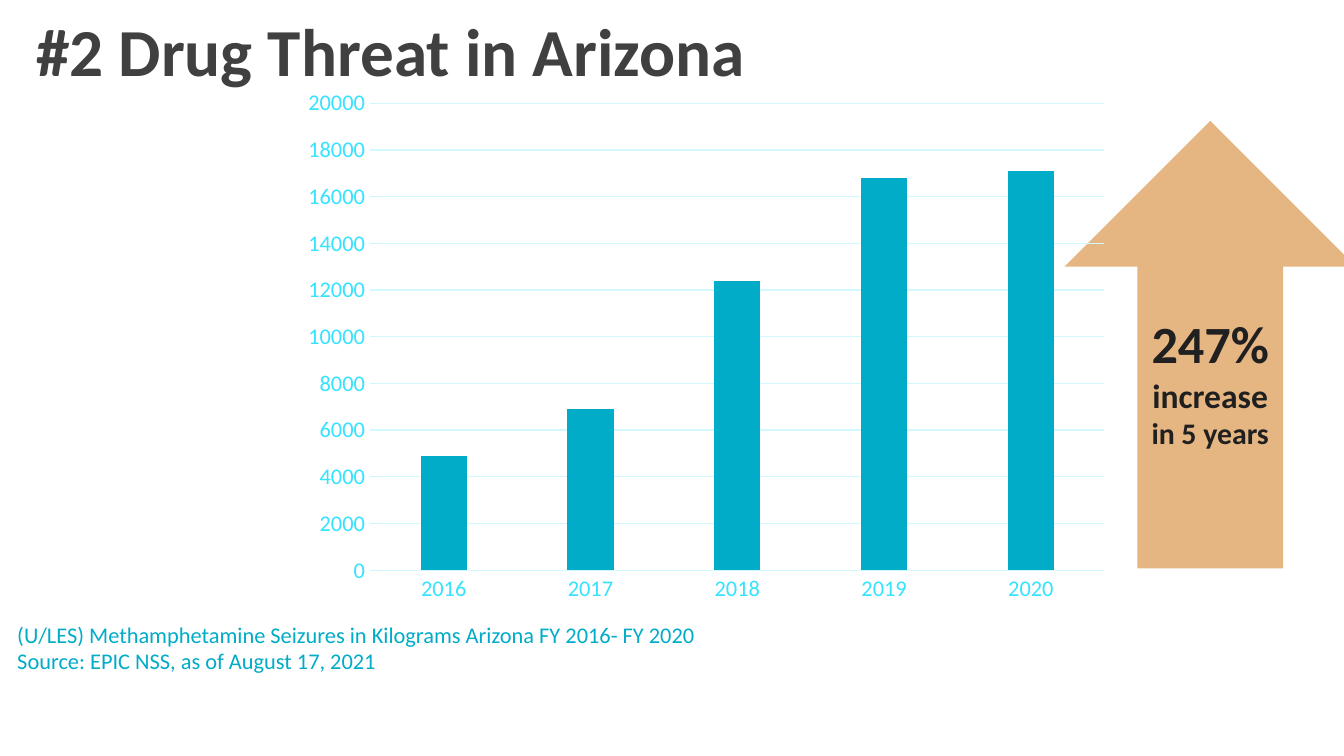
from dataclasses import dataclass

from pptx import Presentation
from pptx.chart.data import CategoryChartData
from pptx.dml.color import RGBColor
from pptx.enum.chart import XL_CHART_TYPE, XL_TICK_MARK
from pptx.enum.shapes import MSO_SHAPE
from pptx.enum.text import MSO_ANCHOR, PP_ALIGN
from pptx.util import Inches, Pt

WIDTH = Inches(10)
HEIGHT = WIDTH * 9 // 16
FONT = "Calibri"
COLORS = {
    "title": "404040",
    "arrow": "E6B682",
    "arrow_text": "202020",
    "bars": "00ACC8",
    "axis": "35E3FF",
    "grid": "D1F8FF",
}
SEIZURES_KG = {"2016": 4900, "2017": 6900, "2018": 12400, "2019": 16800, "2020": 17100}


@dataclass(frozen=True)
class Area:
    """A rectangle in percent of the slide's width and height."""
    left: float
    top: float
    width: float
    height: float

    def box(self) -> tuple[int, int, int, int]:
        return (round(self.left * WIDTH / 100), round(self.top * HEIGHT / 100),
                round(self.width * WIDTH / 100), round(self.height * HEIGHT / 100))


@dataclass(frozen=True)
class Phrase:
    text: str
    size: float
    color: str
    bold: bool = False


TITLE_AREA = Area(1.7, -1.78, 95, 14.58)
ARROW_AREA = Area(79.2, 16, 21.7, 59.2)
CHART_AREA = Area(21.7, 10.49, 61.7, 70.58)
SOURCE_AREA = Area(0.3, 81.24, 90.8, 8.89)


def rgb(name: str) -> RGBColor:
    return RGBColor.from_string(COLORS[name])


def style_font(font, size: float, color: str, bold: bool = False) -> None:
    font.name = FONT
    font.size = Pt(size)
    font.bold = bold
    font.color.rgb = rgb(color)


def write(frame, paragraphs: list[list[Phrase]], anchor=MSO_ANCHOR.TOP,
          align=PP_ALIGN.LEFT) -> None:
    frame.word_wrap = True
    frame.vertical_anchor = anchor
    for index, phrases in enumerate(paragraphs):
        paragraph = frame.add_paragraph() if index else frame.paragraphs[0]
        paragraph.alignment = align
        for phrase in phrases:
            run = paragraph.add_run()
            run.text = phrase.text
            style_font(run.font, phrase.size, phrase.color, phrase.bold)


def add_increase_arrow(slide) -> None:
    arrow = slide.shapes.add_shape(MSO_SHAPE.UP_ARROW, *ARROW_AREA.box())
    arrow.shadow.inherit = False
    arrow.fill.solid()
    arrow.fill.fore_color.rgb = rgb("arrow")
    arrow.line.fill.background()
    write(arrow.text_frame, [[
        Phrase("247%", 28, "arrow_text", True),
        Phrase(" increase ", 18, "arrow_text", True),
        Phrase("in 5 years", 16, "arrow_text", True),
    ]], MSO_ANCHOR.MIDDLE, PP_ALIGN.CENTER)


def style_axis(axis) -> None:
    axis.major_tick_mark = axis.minor_tick_mark = XL_TICK_MARK.NONE
    style_font(axis.tick_labels.font, 12, "axis")


def style_rule(line) -> None:
    line.color.rgb = rgb("grid")
    line.width = Pt(0.75)


def add_seizure_chart(slide) -> None:
    seizures = CategoryChartData()
    seizures.categories = list(SEIZURES_KG)
    seizures.add_series("Series 1", list(SEIZURES_KG.values()))
    chart = slide.shapes.add_chart(
        XL_CHART_TYPE.COLUMN_CLUSTERED, *CHART_AREA.box(), seizures).chart
    chart.has_legend = False
    chart.has_title = False
    style_font(chart.font, 10, "bars")

    years, kilograms = chart.category_axis, chart.value_axis
    style_axis(years)
    style_rule(years.format.line)
    style_axis(kilograms)
    kilograms.format.line.fill.background()
    kilograms.minimum_scale, kilograms.maximum_scale = 0, 20000
    kilograms.major_unit = 2000
    kilograms.has_major_gridlines = True
    style_rule(kilograms.major_gridlines.format.line)
    kilograms.tick_labels.number_format = "0"
    kilograms.tick_labels.number_format_is_linked = False

    plot = chart.plots[0]
    plot.gap_width = 219
    plot.overlap = -27
    plot.vary_by_categories = False
    bars = plot.series[0]
    bars.invert_if_negative = False
    bars.format.fill.solid()
    bars.format.fill.fore_color.rgb = rgb("bars")


def main() -> None:
    deck = Presentation()
    deck.slide_width, deck.slide_height = WIDTH, HEIGHT
    slide = deck.slides.add_slide(deck.slide_layouts[6])

    title = slide.shapes.add_textbox(*TITLE_AREA.box())
    write(title.text_frame, [[Phrase("#2 Drug Threat in Arizona", 36, "title", True)]],
          MSO_ANCHOR.BOTTOM)
    add_increase_arrow(slide)
    add_seizure_chart(slide)
    source = slide.shapes.add_textbox(*SOURCE_AREA.box())
    write(source.text_frame, [
        [Phrase("(U/LES) Methamphetamine Seizures in Kilograms Arizona FY 2016- FY 2020",
                12, "bars")],
        [Phrase("Source: EPIC NSS, as of August 17, 2021", 12, "bars")],
    ])
    deck.save("out.pptx")


if __name__ == "__main__":
    main()
